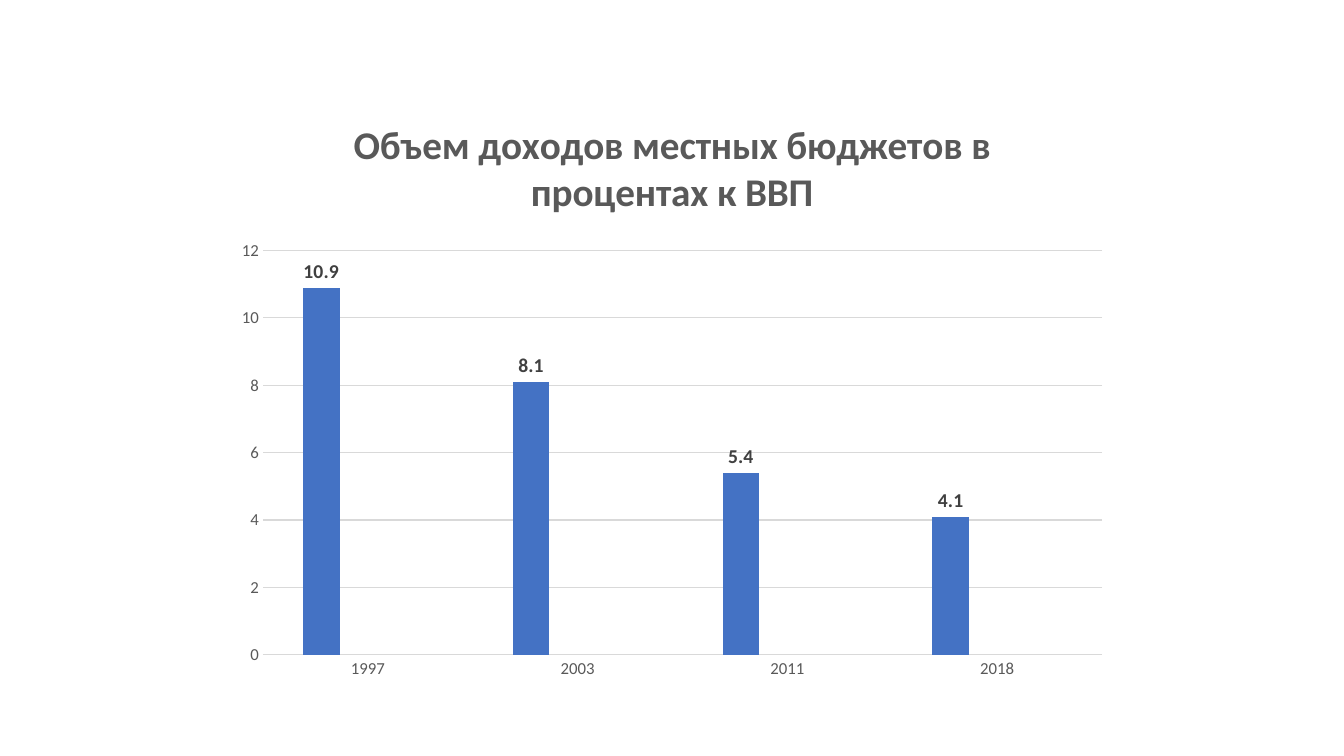
"""Build a slide with a column chart of local budget revenues as a share of GDP."""
from pptx import Presentation
from pptx.chart.data import CategoryChartData
from pptx.dml.color import RGBColor
from pptx.enum.chart import XL_CHART_TYPE, XL_LABEL_POSITION, XL_TICK_MARK
from pptx.util import Pt

COLUMN_CLUSTERED = XL_CHART_TYPE.COLUMN_CLUSTERED
OUTSIDE_END = XL_LABEL_POSITION.OUTSIDE_END
NO_TICK = XL_TICK_MARK.NONE

WHITE = RGBColor(0xFF, 0xFF, 0xFF)
BLACK = RGBColor(0x00, 0x00, 0x00)
TEXT_GREY = RGBColor(0x59, 0x59, 0x59)
LABEL_GREY = RGBColor(0x40, 0x40, 0x40)
LINE_GREY = RGBColor(0xD9, 0xD9, 0xD9)
BLUE = RGBColor(0x44, 0x72, 0xC4)
ORANGE = RGBColor(0xED, 0x7D, 0x31)
SILVER = RGBColor(0xA5, 0xA5, 0xA5)

YEARS = ["1997", "2003", "2011", "2018"]
SERIES = [
    ("Series 1", [10.9, 8.1, 5.4, 4.1], BLUE),
    ("Series 2", [None] * len(YEARS), ORANGE),
    ("Series 3", [None] * len(YEARS), SILVER),
]


def format_font(font, size, color, bold=False):
    font.name = "Calibri"
    font.size = Pt(size)
    font.bold = bold
    font.color.rgb = color


def write_text(text_frame, text, **font_format):
    run = text_frame.paragraphs[0].add_run()
    run.text = text
    format_font(run.font, **font_format)


presentation = Presentation()
presentation.slide_width = Pt(960)
presentation.slide_height = Pt(540)
slide = presentation.slides.add_slide(presentation.slide_layouts[6])
slide.background.fill.solid()
slide.background.fill.fore_color.rgb = WHITE

chart_data = CategoryChartData()
chart_data.categories = YEARS
for name, values, color in SERIES:
    chart_data.add_series(name, values)

chart = slide.shapes.add_chart(
    COLUMN_CLUSTERED, Pt(160), Pt(66.67), Pt(640), Pt(426.67), chart_data
).chart
format_font(chart.font, size=10, color=BLACK)
chart.has_legend = False
chart.has_title = True
chart.chart_title.include_in_layout = False
write_text(
    chart.chart_title.text_frame,
    "Объем доходов местных бюджетов в процентах к ВВП",
    size=28, color=TEXT_GREY, bold=True,
)

plot = chart.plots[0]
plot.gap_width = 219
plot.overlap = -27
plot.vary_by_categories = False
for series, (name, values, color) in zip(plot.series, SERIES):
    series.format.fill.solid()
    series.format.fill.fore_color.rgb = color
    series.invert_if_negative = False

labels = plot.series[0].data_labels
labels.show_value = True
labels.position = OUTSIDE_END
format_font(labels.font, size=14, color=LABEL_GREY, bold=True)

for axis in (chart.category_axis, chart.value_axis):
    axis.major_tick_mark = NO_TICK
    axis.minor_tick_mark = NO_TICK
    format_font(axis.tick_labels.font, size=12, color=TEXT_GREY)

chart.value_axis.format.line.fill.background()
chart.value_axis.has_major_gridlines = True
for line in (chart.category_axis.format.line, chart.value_axis.major_gridlines.format.line):
    line.color.rgb = LINE_GREY
    line.width = Pt(0.75)

presentation.save("out.pptx")
